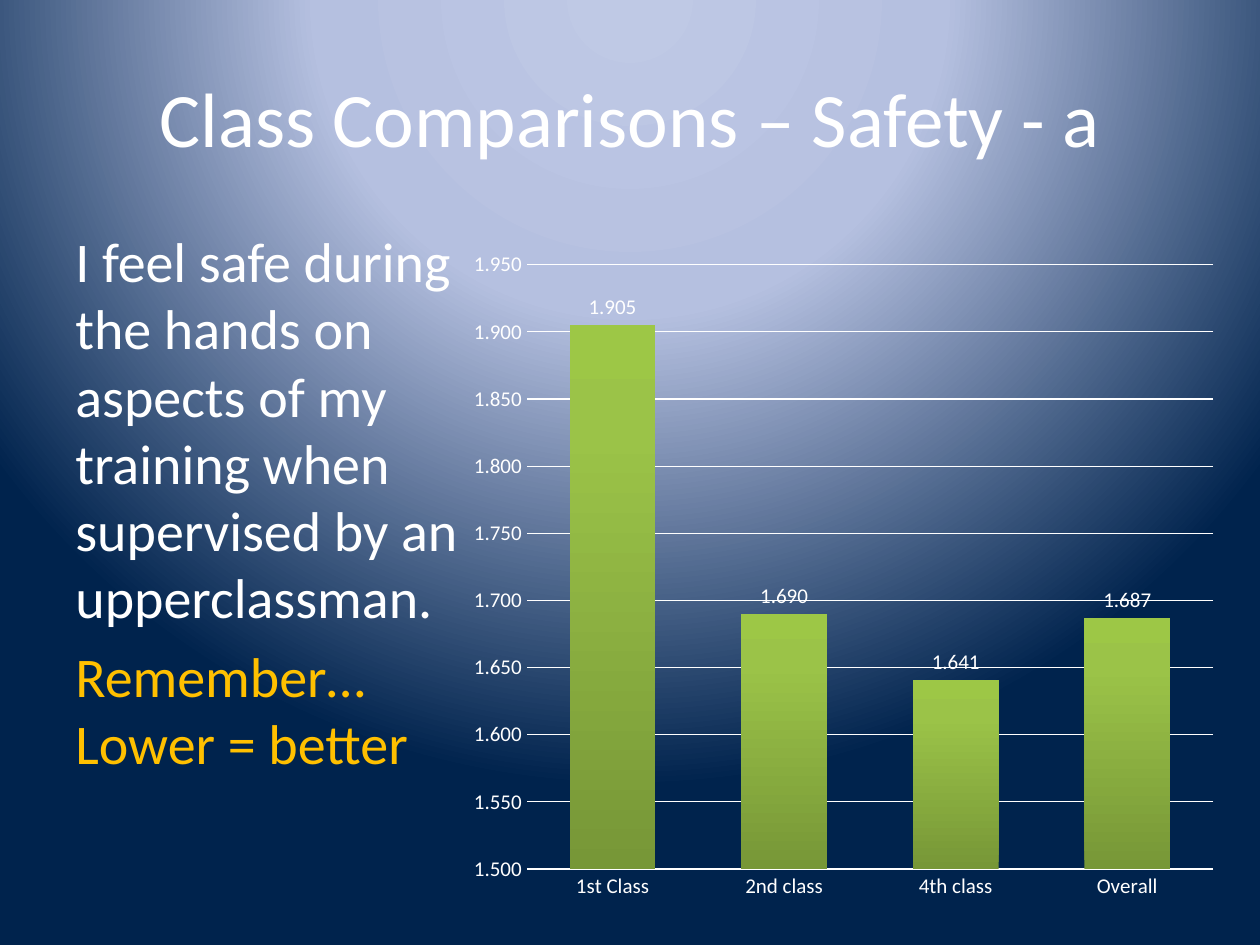
from lxml import etree
from pptx import Presentation
from pptx.chart.data import CategoryChartData
from pptx.dml.color import RGBColor
from pptx.enum import chart as charts, text
from pptx.oxml import parse_xml
from pptx.oxml.ns import nsdecls, qn
from pptx.util import Pt

TITLE = "Class Comparisons – Safety - a"
STATEMENT = ("I feel safe during the hands on aspects of my training "
             "when supervised by an upperclassman.")
REMINDER = "Remember…\vLower = better"
SCORES = {"1st Class": 1.905, "2nd class": 1.69, "4th class": 1.641, "Overall": 1.687}
SCALE = {"minimum_scale": 1.5, "maximum_scale": 1.95, "major_unit": 0.05}
SCORE_FORMAT = "0.000"


class Theme:
    font = "Calibri"
    white = RGBColor.from_string("FFFFFF")
    gold = RGBColor.from_string("FFC000")
    backdrop = [(0, "BFC9E5"), (40, "B5C0E0"), (100, "00234D")]
    bar = [(0, "779737"), (80, "9BC348"), (100, "9DC746")]
    title_size, body_size, chart_size = 44, 32, 12


# left, top, width, height in points
TITLE_AREA = (36, 21.6, 648, 90)
BODY_AREA = (36, 126, 264.24, 356.4)
CHART_AREA = (264.24, 138.24, 437.76, 383.76)
PLOT_AREA = {"x": 0.084, "y": 0.034, "w": 0.896, "h": 0.9}

GLOW = ('<a:path path="circle"><a:fillToRect l="50000" t="-80000" '
        'r="50000" b="180000"/></a:path>')
UPWARD = '<a:lin ang="16200000" scaled="0"/>'


def gradient(stops, direction):
    marks = "".join(f'<a:gs pos="{place * 1000}"><a:srgbClr val="{colour}"/></a:gs>'
                    for place, colour in stops)
    return parse_xml(f'<a:gradFill {nsdecls("a")} rotWithShape="1">'
                     f'<a:gsLst>{marks}</a:gsLst>{direction}</a:gradFill>')


def set_all(target, values):
    for name, value in values.items():
        setattr(target, name, value)


def style_font(font, size, colour=Theme.white):
    set_all(font, {"name": Theme.font, "size": Pt(size), "bold": False})
    font.color.rgb = colour


def place(shape, area):
    set_all(shape, dict(zip(("left", "top", "width", "height"), map(Pt, area))))


def paint_background(page):
    page.background.fill.solid()
    old = page.background._cSld.find(".//" + qn("a:solidFill"))
    old.getparent().replace(old, gradient(Theme.backdrop, GLOW))


def write(para, words, size, colour=Theme.white):
    para.text = words
    for span in para.runs:
        style_font(span.font, size, colour)


def add_title(page):
    title = page.shapes.title
    place(title, TITLE_AREA)
    title.text_frame.vertical_anchor = text.MSO_ANCHOR.MIDDLE
    para = title.text_frame.paragraphs[0]
    para.alignment = text.PP_ALIGN.CENTER
    write(para, TITLE, Theme.title_size)


def add_body(page):
    frame = page.shapes.add_textbox(*map(Pt, BODY_AREA)).text_frame
    frame.word_wrap = True
    write(frame.paragraphs[0], STATEMENT, Theme.body_size)
    reminder = frame.add_paragraph()
    reminder.space_before = Pt(6.4)
    write(reminder, REMINDER, Theme.body_size, Theme.gold)


def fix_plot_area(chart):
    """Pin the inner plot area to fractions of the chart."""
    plot_area = chart._chartSpace.chart.plotArea
    for old in plot_area.findall(qn("c:layout")):
        plot_area.remove(old)
    layout = etree.Element(qn("c:layout"))
    manual = etree.SubElement(layout, qn("c:manualLayout"))
    settings = {"layoutTarget": "inner", "xMode": "edge", "yMode": "edge", **PLOT_AREA}
    for name, value in settings.items():
        etree.SubElement(manual, qn("c:" + name)).set("val", str(value))
    plot_area.insert(0, layout)


def add_score_chart(page):
    data = CategoryChartData(number_format=SCORE_FORMAT)
    data.categories = list(SCORES)
    data.add_series("Series 1", list(SCORES.values()))
    chart = page.shapes.add_chart(
        charts.XL_CHART_TYPE.COLUMN_CLUSTERED, *map(Pt, CHART_AREA), data).chart
    set_all(chart, {"has_legend": False, "has_title": False})
    style_font(chart.font, 10)
    fix_plot_area(chart)

    classes, scores = chart.category_axis, chart.value_axis
    for axis in (classes, scores):
        axis.major_tick_mark = charts.XL_TICK_MARK.NONE
        style_font(axis.tick_labels.font, Theme.chart_size)
    set_all(scores, SCALE)
    set_all(scores.tick_labels, {"number_format": SCORE_FORMAT,
                                 "number_format_is_linked": False})
    scores.format.line.fill.background()
    for line, width in ((classes.format.line, 1),
                        (scores.major_gridlines.format.line, 0.75)):
        line.color.rgb = Theme.white
        line.width = Pt(width)

    plot = chart.plots[0]
    set_all(plot, {"gap_width": 100, "overlap": -24,
                   "vary_by_categories": False, "has_data_labels": True})
    set_all(plot.data_labels, {"show_value": True, "number_format": SCORE_FORMAT,
                               "number_format_is_linked": False,
                               "position": charts.XL_LABEL_POSITION.OUTSIDE_END})
    style_font(plot.data_labels.font, Theme.chart_size)

    bars = plot.series[0]
    bars.format.fill.solid()
    solid = bars._element.find(qn("c:spPr")).find(qn("a:solidFill"))
    solid.getparent().replace(solid, gradient(Theme.bar, UPWARD))


def main():
    deck = Presentation()
    set_all(deck, {"slide_width": Pt(720), "slide_height": Pt(540)})
    page = deck.slides.add_slide(deck.slide_layouts[5])
    paint_background(page)
    add_title(page)
    add_body(page)
    add_score_chart(page)
    deck.save("out.pptx")


if __name__ == "__main__":
    main()
